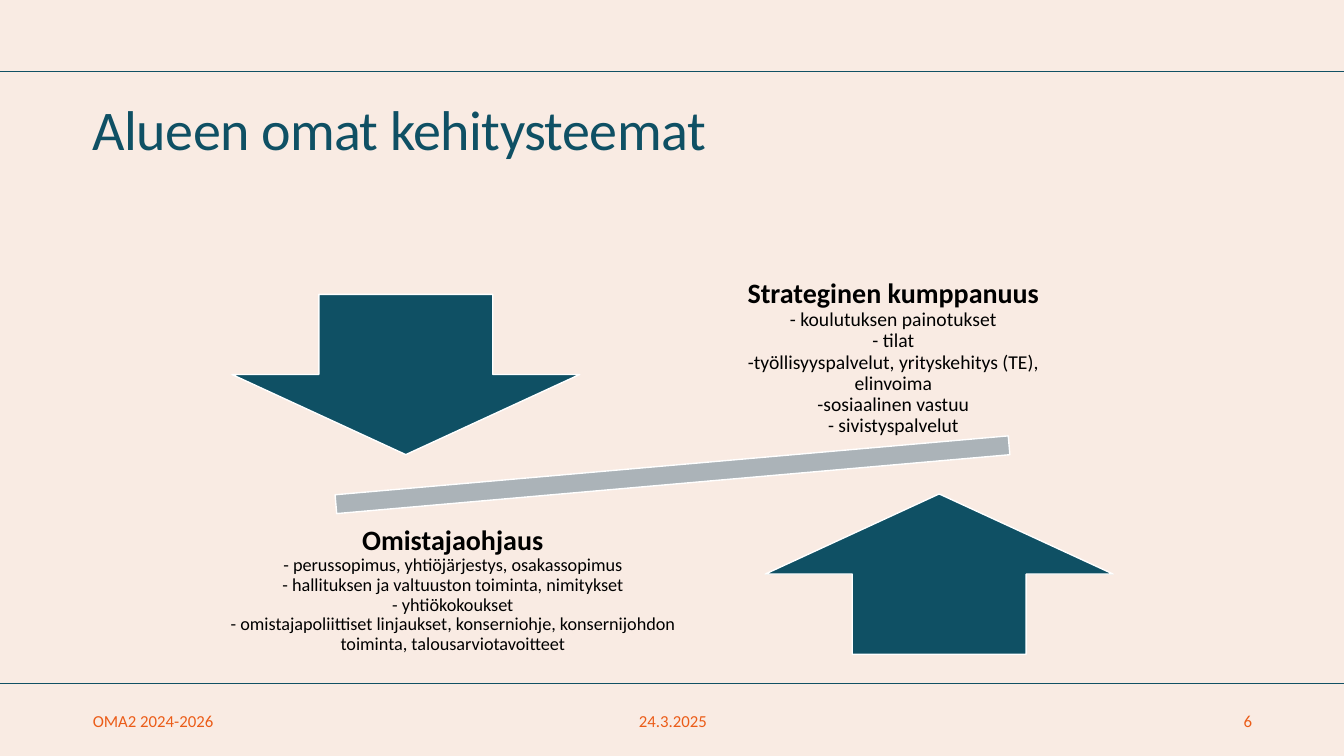
from lxml.etree import SubElement
from pptx import Presentation
from pptx.dml.color import RGBColor
from pptx.enum.shapes import MSO_CONNECTOR, MSO_SHAPE
from pptx.enum.text import MSO_ANCHOR, PP_ALIGN
from pptx.oxml.ns import qn
from pptx.util import Inches, Pt

WIDE, HIGH = 13.33, 7.5
SIDE = 0.92
TEAL, GREY, ORANGE = "0F5064", "ABB3B8", "EB5C18"
WHITE, BLACK, CREAM, RULE = "FFFFFF", "000000", "F9EBE3", "115064"

TITLE = "Alueen omat kehitysteemat"
RULES = [0.71, 6.78]
ARROWS = [
    (MSO_SHAPE.DOWN_ARROW, 2.3, 2.92),
    (MSO_SHAPE.UP_ARROW, 7.59, 4.9),
]
THEMES = [
    ("Strateginen kumppanuus", 14, (7.02, 2.72, 3.68, 1.67), [
        "- koulutuksen painotukset",
        "- tilat",
        "-työllisyyspalvelut, yrityskehitys (TE), elinvoima",
        "-sosiaalinen vastuu",
        "- sivistyspalvelut",
    ]),
    ("Omistajaohjaus", 13, (2.1, 5.02, 4.78, 1.67), [
        "- perussopimus, yhtiöjärjestys, osakassopimus",
        "- hallituksen ja valtuuston toiminta, nimitykset",
        "- yhtiökokoukset",
        "- omistajapoliittiset linjaukset, konserniohje, konsernijohdon toiminta, talousarviotavoitteet",
    ]),
]
FOOTER = [
    ("OMA2 2024-2026", SIDE, 4.02, PP_ALIGN.LEFT),
    ("24.3.2025", 5.46, 2.43, PP_ALIGN.CENTER),
    ("6", 9.42, 3, PP_ALIGN.RIGHT),
]


def color(code):
    return RGBColor.from_string(code)


def place(*sizes):
    return [Inches(size) for size in sizes]


def frame(box, inset=0, anchor=MSO_ANCHOR.MIDDLE):
    text = box.text_frame
    text.word_wrap = True
    text.vertical_anchor = anchor
    text.margin_left = text.margin_right = Inches(inset)
    text.margin_top = text.margin_bottom = Inches(inset)
    return text


def write(para, words, size, code, align=PP_ALIGN.LEFT, bold=False):
    para.text = words
    para.alignment = align
    font = para.font
    font.name, font.size, font.bold = "Calibri", Pt(size), bold
    font.color.rgb = color(code)


def shape(kind, spot, fill):
    item = slide.shapes.add_shape(kind, *place(*spot))
    item.shadow.inherit = False
    item.fill.solid()
    item.fill.fore_color.rgb = color(fill)
    item.line.color.rgb = color(WHITE)
    item.line.width = Pt(1)
    return item


deck = Presentation()
deck.slide_width, deck.slide_height = place(WIDE, HIGH)
slide = deck.slides.add_slide(deck.slide_layouts[5])
slide.background.fill.solid()
slide.background.fill.fore_color.rgb = color(CREAM)

for y in RULES:
    rule = slide.shapes.add_connector(MSO_CONNECTOR.STRAIGHT, *place(0, y, WIDE, y))
    rule.line.color.rgb = color(RULE)
    rule.line.width = Pt(0.48)
    SubElement(rule.line._get_or_add_ln().getparent(), qn("a:effectLst"))

title = slide.shapes.title
title.left, title.top, title.width, title.height = place(SIDE, 1.05, 11.7, 1.25)
head = frame(title, anchor=MSO_ANCHOR.TOP).paragraphs[0]
write(head, TITLE, 40, TEAL)
head.line_spacing = 0.83
head.runs[0]._r.get_or_add_rPr().set("spc", "-40")

beam = shape(MSO_SHAPE.MATH_MINUS, (2.11, 4.31, 9.12, 0.8), GREY)
beam.rotation = 355
for kind, x, y in ARROWS:
    shape(kind, (x, y, 3.45, 1.59), TEAL)

for name, size, spot, points in THEMES:
    text = frame(slide.shapes.add_textbox(*place(*spot)), 0.16)
    write(text.paragraphs[0], name, 20, BLACK, PP_ALIGN.CENTER, True)
    for point in points:
        write(text.add_paragraph(), point, size, BLACK, PP_ALIGN.CENTER)
    for para in text.paragraphs:
        para.line_spacing = 0.9

for words, x, width, align in FOOTER:
    box = slide.shapes.add_textbox(*place(x, 6.96, width, 0.38))
    write(frame(box).paragraphs[0], words, 12, ORANGE, align)

deck.save("out.pptx")
